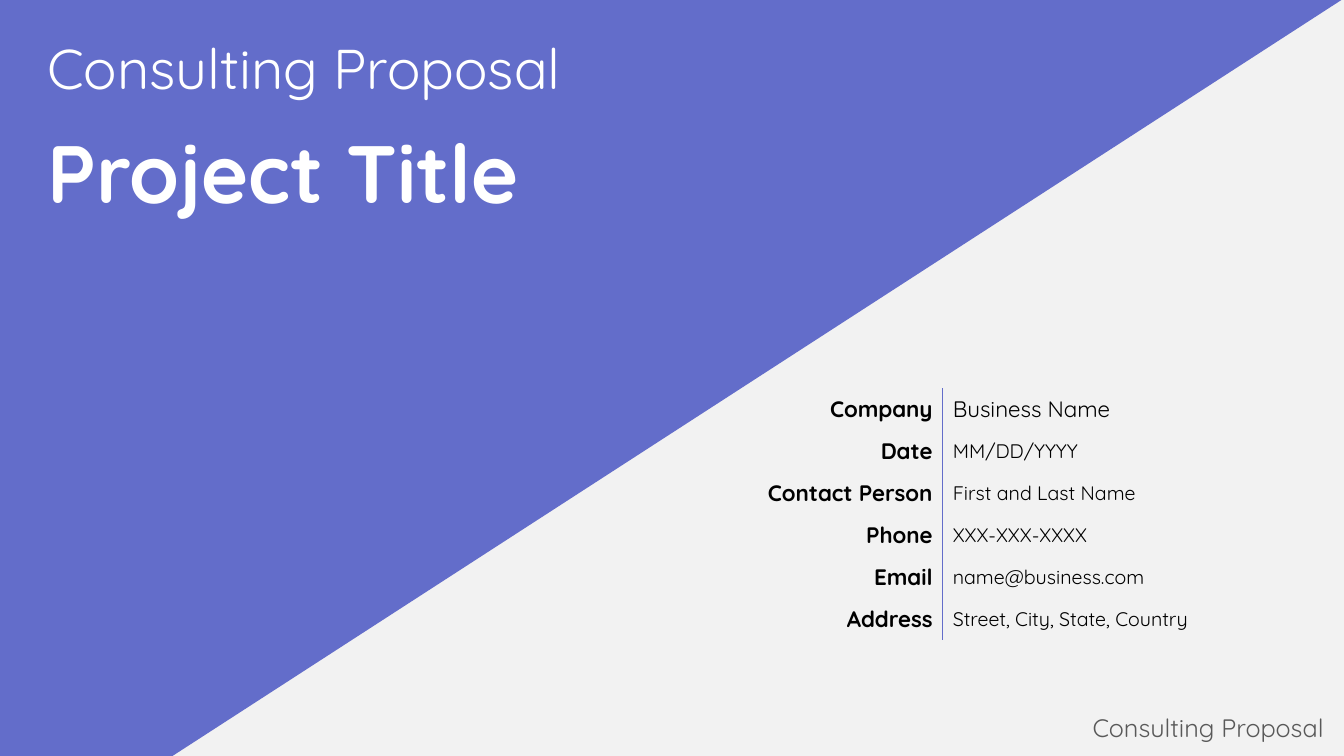
from pptx import Presentation
from pptx.dml.color import RGBColor
from pptx.enum.text import MSO_ANCHOR, MSO_AUTO_SIZE, PP_ALIGN
from pptx.oxml import parse_xml
from pptx.oxml.ns import nsdecls
from pptx.util import Inches, Pt

LEFT, RIGHT = PP_ALIGN.LEFT, PP_ALIGN.RIGHT
TOP, MIDDLE = MSO_ANCHOR.TOP, MSO_ANCHOR.MIDDLE
NO_FIT = MSO_AUTO_SIZE.NONE

BLUE = RGBColor(0x63, 0x6D, 0xCA)
PALE = RGBColor(0xF2, 0xF2, 0xF2)
GRAY = RGBColor(0x59, 0x59, 0x59)
WHITE = RGBColor(0xFF, 0xFF, 0xFF)
BLACK = RGBColor(0x00, 0x00, 0x00)
FONT = "Quicksand"
TITLE_ONLY = 5

# Label, value, value size
DETAILS = [
    ("Company", "Business Name", 16),
    ("Date", "MM/DD/YYYY", 14),
    ("Contact Person", "First and Last Name", 14),
    ("Phone", "XXX-XXX-XXXX", 14),
    ("Email", "name@business.com", 14),
    ("Address", "Street, City, State, Country", 14),
]


def set_text(frame, text, size, color, bold=False, align=LEFT):
    frame.text = text
    para = frame.paragraphs[0]
    para.alignment = align
    font = para.font
    font.name, font.size, font.bold = FONT, Pt(size), bold
    font.color.rgb = color


def set_frame(frame, sides, ends):
    """Margins in inches: (left, right) sides and equal top and bottom ends."""
    frame.word_wrap = True
    frame.auto_size = NO_FIT
    frame.vertical_anchor = TOP
    frame.margin_left, frame.margin_right = map(Inches, sides)
    frame.margin_top = frame.margin_bottom = Inches(ends)


def add_label(slide, box, text, size, color, sides=(0.1, 0.1), ends=0.05, align=LEFT):
    label = slide.shapes.add_textbox(*map(Inches, box))
    set_frame(label.text_frame, sides, ends)
    set_text(label.text_frame, text, size, color, align=align)


def add_wedge(slide, left, top, width, height):
    """Blue area cut off by the slanted edge."""
    points = [(left + width, top), (left + 1.68, top + height), (left, top + height)]
    path = slide.shapes.build_freeform(Inches(left), Inches(top), scale=1.0)
    path.add_line_segments([(Inches(x), Inches(y)) for x, y in points], close=True)
    wedge = path.convert_to_shape()
    wedge.shadow.inherit = False
    wedge.fill.solid()
    wedge.fill.fore_color.rgb = BLUE
    wedge.line.fill.background()


def add_heading(slide, left, top, width):
    add_label(slide, (left, top, width, 0.77), "Consulting Proposal", 40, WHITE)
    title = slide.shapes.title
    title.left, title.top = Inches(left), Inches(top + 0.88)
    title.width, title.height = Inches(width), Inches(1.08)
    set_frame(title.text_frame, (0.1, 0.1), 0.05)
    set_text(title.text_frame, "Project Title", 58, WHITE, bold=True)
    # Bring the title in front of the wedge
    title.element.getparent().append(title.element)


def set_borders(cell, ruled):
    """Draw a thin blue rule on one side and nothing on the others."""
    props = cell._tc.get_or_add_tcPr()
    for i, side in enumerate(("lnL", "lnR", "lnT", "lnB")):
        paint = "<a:noFill/>"
        if side == ruled:
            paint = f'<a:solidFill><a:srgbClr val="{BLUE}"/></a:solidFill>'
        line = f'<a:{side} {nsdecls("a")} w="{Pt(0.5)}">{paint}</a:{side}>'
        props.insert(i, parse_xml(line))


def add_details(slide, left, top, widths, pitch):
    count = len(DETAILS)
    frame = slide.shapes.add_table(
        count, 2, Inches(left), Inches(top), Inches(sum(widths)), Inches(pitch * count))
    table = frame.table
    table.first_row = table.horz_banding = False
    for column, width in zip(table.columns, widths):
        column.width = Inches(width)
    for r, (name, value, size) in enumerate(DETAILS):
        table.rows[r].height = Inches(pitch)
        looks = [(name, 16, True, RIGHT, "lnR"), (value, size, False, LEFT, "lnL")]
        for c, (text, points, bold, align, ruled) in enumerate(looks):
            cell = table.cell(r, c)
            cell.vertical_anchor = MIDDLE
            cell.fill.solid()
            cell.fill.fore_color.rgb = PALE
            set_text(cell.text_frame, text, points, BLACK, bold, align)
            set_borders(cell, ruled)


def add_cover(deck):
    slide = deck.slides.add_slide(deck.slide_layouts[TITLE_ONLY])
    slide.background.fill.solid()
    slide.background.fill.fore_color.rgb = PALE
    # Footer
    add_label(slide, (6.36, 6.99, 6.97, 0.46), "Consulting Proposal", 18, GRAY,
              sides=(0.1, 0.2), ends=0.08, align=RIGHT)
    add_wedge(slide, 0, -0.01, 13.32, 7.53)
    add_heading(slide, 0.37, 0.28, 8.24)
    add_details(slide, 7.45, 3.85, (1.9, 3.56), 0.417)


def main():
    deck = Presentation()
    deck.slide_width, deck.slide_height = Inches(13.33), Inches(7.5)
    add_cover(deck)
    deck.save("out.pptx")


if __name__ == "__main__":
    main()
